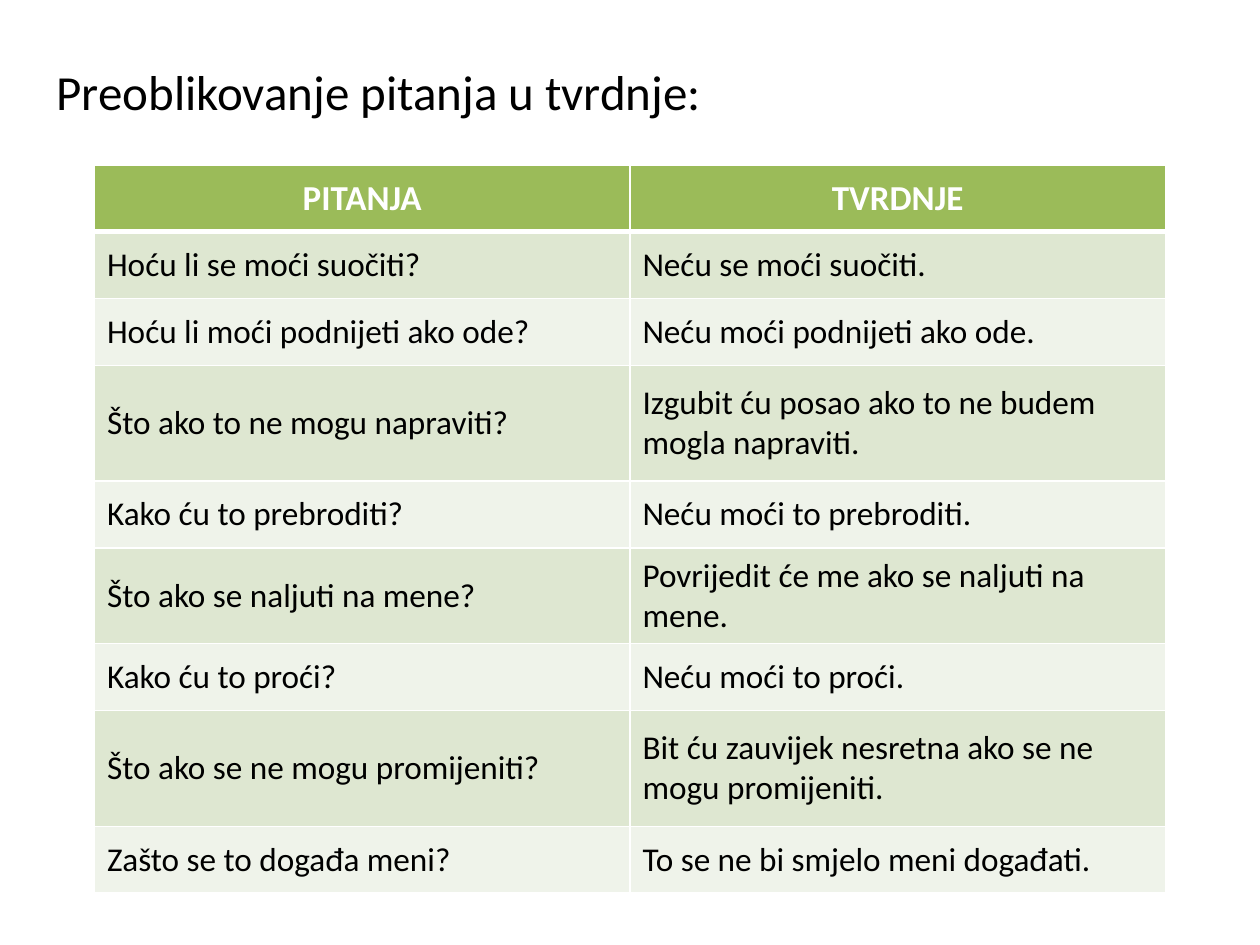
from lxml import etree
from pptx import Presentation
from pptx.dml.color import RGBColor
from pptx.enum.text import MSO_ANCHOR, PP_ALIGN
from pptx.oxml.ns import qn
from pptx.util import Inches, Pt

MIDDLE = MSO_ANCHOR.MIDDLE
LEFT, CENTER = PP_ALIGN.LEFT, PP_ALIGN.CENTER
FONT = "Calibri"
COLORS = {
    "text": "000000",
    "white": "FFFFFF",
    "header": "9BBB59",
    "odd_row": "DEE7D1",
    "even_row": "EFF3EA",
}
FORMATS = {
    "heading": {"name": FONT, "size": Pt(28)},
    "header": {"name": FONT, "size": Pt(20), "bold": True},
    "body": {"name": FONT, "size": Pt(19), "bold": False},
}
HEADING = "Preoblikovanje pitanja u tvrdnje:"
ROWS = [
    (0.53, "PITANJA", "TVRDNJE"),
    (0.53, "Hoću li se moći suočiti?", "Neću se moći suočiti."),
    (0.53, "Hoću li moći podnijeti ako ode?", "Neću moći podnijeti ako ode."),
    (0.92, "Što ako to ne mogu napraviti?", "Izgubit ću posao ako to ne budem mogla napraviti."),
    (0.53, "Kako ću to prebroditi?", "Neću moći to prebroditi."),
    (0.76, "Što ako se naljuti na mene?", "Povrijedit će me ako se naljuti na mene."),
    (0.53, "Kako ću to proći?", "Neću moći to proći."),
    (0.92, "Što ako se ne mogu promijeniti?", "Bit ću zauvijek nesretna ako se ne mogu promijeniti."),
    (0.53, "Zašto se to događa meni?", "To se ne bi smjelo meni događati."),
]


def format_font(font, style, color):
    for attribute, value in FORMATS[style].items():
        setattr(font, attribute, value)
    font.color.rgb = RGBColor.from_string(COLORS[color])


def add_borders(cell, widths):
    properties = cell._tc.get_or_add_tcPr()
    for side, width in widths.items():
        line = etree.SubElement(properties, qn(f"a:ln{side}"), w=str(Pt(width)))
        fill = etree.SubElement(line, qn("a:solidFill"))
        etree.SubElement(fill, qn("a:srgbClr"), val=COLORS["white"])


def place_heading(placeholder, left, top, width, height):
    placeholder.left, placeholder.top = left, top
    placeholder.width, placeholder.height = width, height
    placeholder.text_frame.text = HEADING
    paragraph = placeholder.text_frame.paragraphs[0]
    etree.SubElement(paragraph._p.get_or_add_pPr(), qn("a:buNone"))
    format_font(paragraph.runs[0].font, "heading", "text")


def fill_cell(cell, text, row_index):
    is_header = row_index == 0
    bottom = 3 if is_header else 1
    top = 3 if row_index == 1 else 1
    add_borders(cell, {"L": 1, "R": 1, "T": top, "B": bottom})
    fill_name = "header" if is_header else ("odd_row" if row_index % 2 else "even_row")
    cell.fill.solid()
    cell.fill.fore_color.rgb = RGBColor.from_string(COLORS[fill_name])
    cell.vertical_anchor = MIDDLE
    cell.text = text
    paragraph = cell.text_frame.paragraphs[0]
    paragraph.alignment = CENTER if is_header else LEFT
    format_font(paragraph.runs[0].font, "header" if is_header else "body",
                "white" if is_header else "text")


def add_statement_table(slide, left, top, width, height):
    table = slide.shapes.add_table(len(ROWS), 2, left, top, width, height).table
    for column in table.columns:
        column.width = width // 2
    for row_index, (row_height, *texts) in enumerate(ROWS):
        table.rows[row_index].height = Inches(row_height)
        for column_index, text in enumerate(texts):
            fill_cell(table.cell(row_index, column_index), text, row_index)


def main():
    presentation = Presentation()
    presentation.slide_width, presentation.slide_height = Inches(10), Inches(7.5)
    slide = presentation.slides.add_slide(presentation.slide_layouts[1])
    title = slide.shapes.title
    title._element.getparent().remove(title._element)
    place_heading(slide.placeholders[1], Inches(0.35), Inches(0.44), Inches(9.29), Inches(6.61))
    add_statement_table(slide, Inches(0.75), Inches(1.31), Inches(8.5), Inches(5.81))
    presentation.save("out.pptx")


if __name__ == "__main__":
    main()
